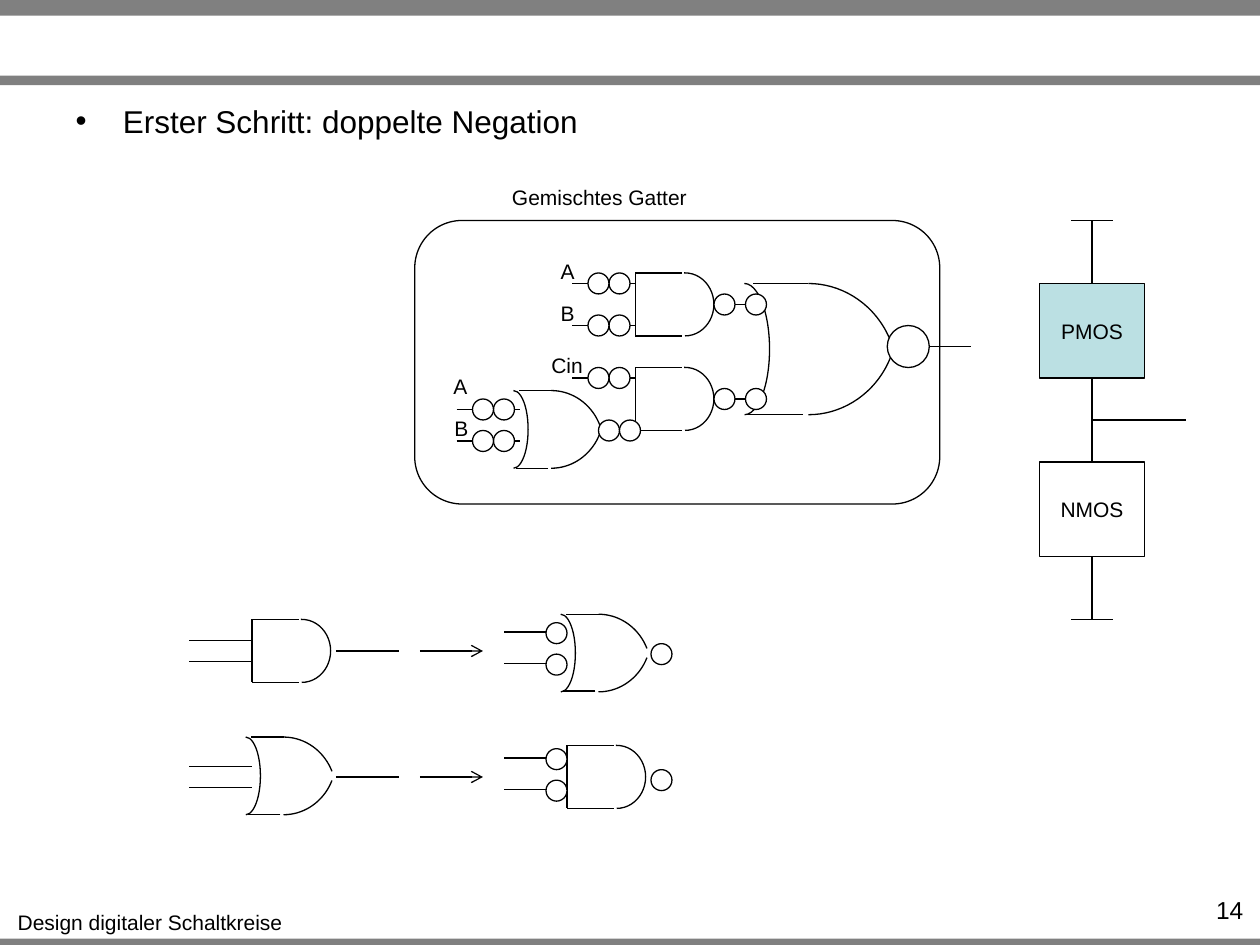
from lxml.etree import SubElement
from pptx import Presentation
from pptx.dml.color import RGBColor
from pptx.enum.shapes import MSO_CONNECTOR, MSO_SHAPE as Form
from pptx.enum.text import MSO_ANCHOR as Anchor, PP_ALIGN as Align
from pptx.oxml.ns import qn
from pptx.util import Pt

UNIT = 7620  # EMU per px, 120 px to the inch
HUES = {"ink": "000000", "bar": "808080", "paper": "FFFFFF", "pmos": "BBE0E3"}


def emu(*px):
    return [round(n) * UNIT for n in px]


class Sheet:
    def __init__(self, slide):
        self.slide = slide
        self.shapes = slide.shapes
        self.font = "Arial"
        self.width = Pt(0.75)

    def hue(self, name):
        return RGBColor.from_string(HUES[name])

    def add_text(self, para, text, size=12):
        run = para.add_run()
        run.text = text
        run.font.name = self.font
        run.font.size = Pt(size)
        run.font.color.rgb = self.hue("ink")

    def label(self, x, y, w, h, text, size=12, align=Align.CENTER, wrap=False):
        box = self.shapes.add_textbox(*emu(x, y, w, h))
        box.text_frame.word_wrap = wrap
        para = box.text_frame.paragraphs[0]
        para.alignment = align
        self.add_text(para, text, size)

    def bullet(self, x, y, w, h, text, size, indent):
        """Fill the body placeholder with one bulleted line."""
        body = self.slide.placeholders[1]
        body.left, body.top, body.width, body.height = emu(x, y, w, h)
        para = body.text_frame.paragraphs[0]
        para.space_before = Pt(0)
        props = para._p.get_or_add_pPr()
        props.set("marL", str(indent * UNIT))
        props.set("indent", str(-indent * UNIT))
        SubElement(props, qn("a:buChar")).set("char", "•")
        self.add_text(para, text, size)

    def shape(self, form, x, y, w, h, fill=None, line="ink"):
        item = self.shapes.add_shape(form, *emu(x, y, w, h))
        item.shadow.inherit = False
        if fill:
            item.fill.solid()
            item.fill.fore_color.rgb = self.hue(fill)
        else:
            item.fill.background()
        if line:
            item.line.color.rgb = self.hue(line)
            item.line.width = self.width
        else:
            item.line.fill.background()
        return item

    def bar(self, y, h):
        self.shape(Form.RECTANGLE, 0, y, 1200, h, "bar", None)

    def block(self, x, y, w, h, text, fill=None):
        item = self.shape(Form.RECTANGLE, x, y, w, h, fill)
        item.text_frame.vertical_anchor = Anchor.MIDDLE
        para = item.text_frame.paragraphs[0]
        para.alignment = Align.CENTER
        self.add_text(para, text)

    def wire(self, x1, y1, x2, y2, arrow=False):
        wire = self.shapes.add_connector(MSO_CONNECTOR.STRAIGHT, *emu(x1, y1, x2, y2))
        wire.line.color.rgb = self.hue("ink")
        wire.line.width = self.width
        props = wire._element.spPr
        if arrow:
            SubElement(props.find(qn("a:ln")), qn("a:tailEnd")).set("type", "arrow")
        SubElement(props, qn("a:effectLst"))

    def arc(self, x, y, w, h, end, flip=False):
        """Draw an arc from the top clockwise to the end angle in degrees."""
        item = self.shape(Form.ARC, x, y, w, h)
        item.adjustments[0] = 162
        item.adjustments[1] = end * 0.6
        if flip:
            item._element.spPr.find(qn("a:xfrm")).set("flipV", "1")

    def bubble(self, x, y, size=20):
        self.shape(Form.OVAL, x, y, size, size, "paper")

    def and_gate(self, x, y):
        for edge in (y, y + 60):
            self.wire(x, edge, x + 45, edge)
        self.arc(x + 20, y, 55, 60, 91.5, True)
        self.wire(x, y, x, y + 60)

    def or_gate(self, x, y, scale=1):
        wide, high, base = 100 * scale, 105.5 * scale, y + 73.5 * scale
        self.arc(x, y, 28 * scale, 73.5 * scale, 89.8)
        self.arc(x, y, wide, high, 336.14)
        self.wire(x + 50 * scale, y, x + 19 * scale, y)
        self.wire(x + 47 * scale, base, x + 16 * scale, base)
        self.arc(x, base - high, wide, high, 336.14, True)


def draw_frame(sheet):
    for y, h in ((894, 10), (0, 15), (72, 9)):
        sheet.bar(y, h)
    sheet.label(4, 860, 278, 36, "Design digitaler Schaltkreise")
    sheet.bullet(60, 91, 1080, 89, "Erster Schritt: doppelte Negation", 18, 45)
    sheet.label(1092, 847, 104, 29, "14", 14, Align.RIGHT, True)


def draw_mixed(sheet):
    """Draw the mixed gate with its doubled negations."""
    sheet.shape(Form.ROUNDED_RECTANGLE, 395, 210, 500, 270)
    sheet.label(475, 170, 192, 36, "Gemischtes Gatter")
    sheet.and_gate(605, 260)
    sheet.and_gate(605, 350)
    sheet.or_gate(685, 270, 1.7)
    sheet.or_gate(475, 372)

    inputs = ((545, 270), (545, 310), (545, 360), (435, 390), (435, 420))
    for x, y in inputs:
        sheet.wire(x, y, x + 60, y)
    for y in (290, 380):
        sheet.wire(685, y, 725, y)
    sheet.wire(575, 410, 605, 410)
    sheet.bubble(845, 310, 40)
    sheet.wire(885, 330, 925, 330)

    for x, y, w, text in ((522, 240, 37, "A"), (522, 280, 37, "B"),
                          (513, 330, 54, "Cin"), (420, 350, 37, "A"),
                          (421, 390, 37, "B")):
        sheet.label(x, y, w, 36, text)

    for x, y in inputs:
        for step in (35, 15):
            sheet.bubble(x + step, y - 10)
    for y in (280, 370):
        for x in (680, 710):
            sheet.bubble(x, y)
    for x in (570, 590):
        sheet.bubble(x, 400)


def draw_cmos(sheet):
    sheet.block(990, 440, 100, 90, "NMOS")
    sheet.block(990, 270, 100, 90, "PMOS", "pmos")
    for top, end in ((210, 270), (360, 440), (530, 590)):
        sheet.wire(1040, top, 1040, end)
    for y in (210, 590):
        sheet.wire(1060, y, 1020, y)
    sheet.wire(1040, 400, 1130, 400)


def draw_rules(sheet):
    """Draw the two gate swaps, one per row."""
    sheet.and_gate(240, 590)
    sheet.or_gate(520, 585)
    sheet.or_gate(220, 702)
    sheet.and_gate(540, 710)
    for mid in (620, 740):
        for y in (mid - 10, mid + 10):
            sheet.wire(180, y, 240, y)
        sheet.wire(320, mid, 380, mid)
        sheet.wire(400, mid, 460, mid, True)
        for y in (mid - 18, mid + 12):
            sheet.wire(480, y, 540, y)
            sheet.bubble(520, y - 9)
        sheet.bubble(620, mid - 7)


def main():
    deck = Presentation()
    deck.slide_width, deck.slide_height = emu(1200, 900)
    slide = deck.slides.add_slide(deck.slide_layouts[1])
    title = slide.shapes.title._element
    title.getparent().remove(title)
    sheet = Sheet(slide)
    for draw in (draw_frame, draw_mixed, draw_cmos, draw_rules):
        draw(sheet)
    deck.save("out.pptx")


if __name__ == "__main__":
    main()
